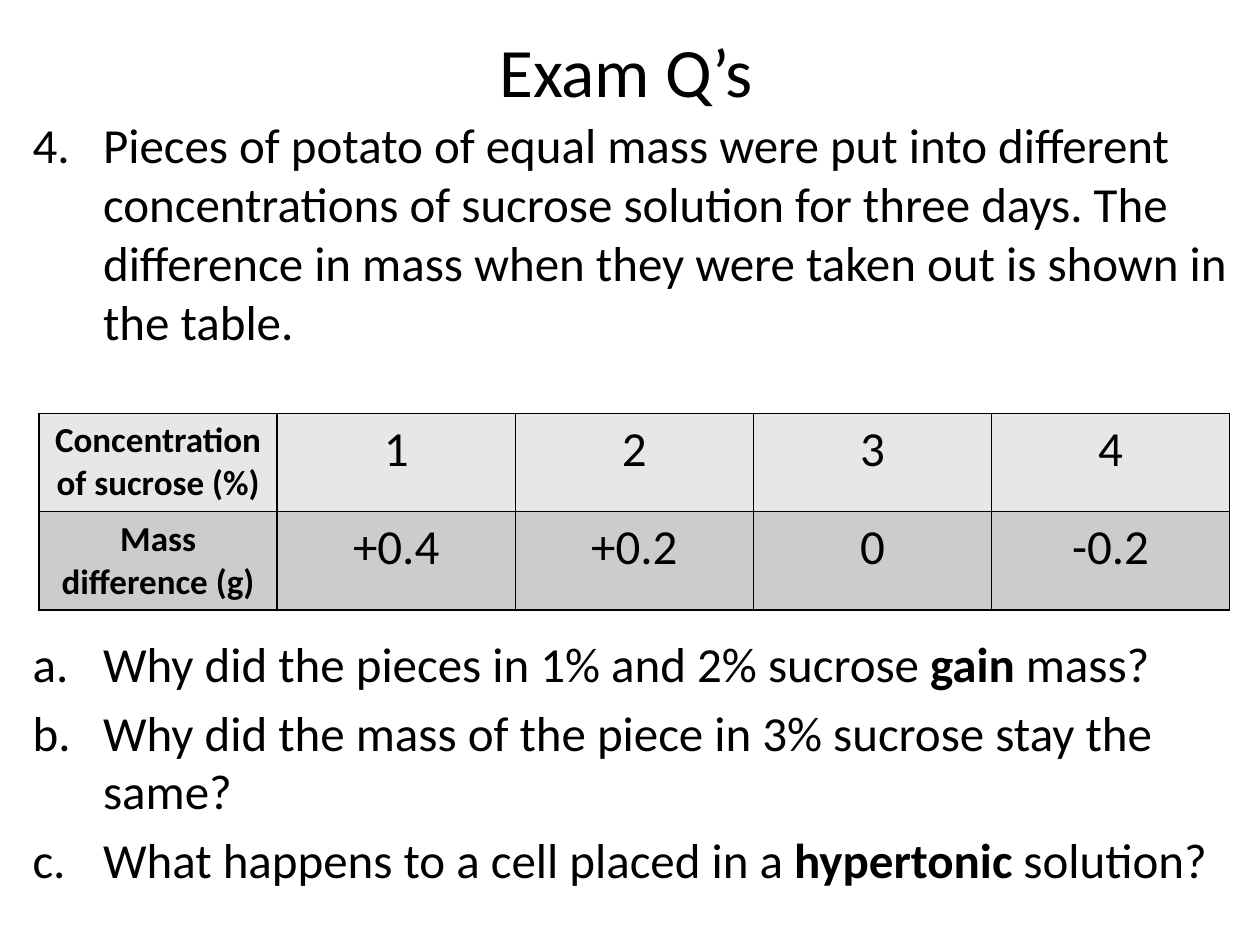
import pptx
import pptx.util
import pptx.dml.color
import pptx.enum.text
import pptx.oxml.ns
from lxml import etree

Inches, Pt = pptx.util.Inches, pptx.util.Pt
CENTER = pptx.enum.text.PP_ALIGN.CENTER
FONT = "Calibri"
COLORS = {"ink": "000000", "concentration": "E7E7E7", "mass": "CCCCCC"}

heading = "Exam Q’s"
INTRO_GAP, TABLE_GAP, ITEM_GAP = 5.6, 162, 5.6
questions = [
    ("arabicPeriod", 4, INTRO_GAP, [
        ("Pieces of potato of equal mass were put into different concentrations of "
         "sucrose solution for three days. The difference in mass when they were "
         "taken out is shown in the table.", False)]),
    ("alphaLcPeriod", 1, TABLE_GAP, [
        ("Why did the pieces in 1% and 2% sucrose ", False),
        ("gain ", True), ("mass?", False)]),
    ("alphaLcPeriod", 1, ITEM_GAP, [
        ("Why did the mass of the piece in 3% sucrose stay the same?", False)]),
    ("alphaLcPeriod", 1, ITEM_GAP, [
        ("What happens to a cell placed in a ", False),
        ("hypertonic", True), (" solution?", False)]),
]
results = [
    ("concentration", ["Concentration of sucrose (%)", "1", "2", "3", "4"]),
    ("mass", ["Mass difference (g)", "+0.4", "+0.2", "0", "-0.2"]),
]
COLUMN_WIDTH, ROW_HEIGHT = 1.89, 0.78


def rgb(name):
    return pptx.dml.color.RGBColor.from_string(COLORS[name])


def add_run(paragraph, text, size, bold=False):
    run = paragraph.add_run()
    run.text = text
    run.font.name, run.font.size, run.font.bold = FONT, Pt(size), bold
    run.font.color.rgb = rgb("ink")


def add_node(parent, tag, **attributes):
    return etree.SubElement(parent, pptx.oxml.ns.qn(tag), attributes)


def add_text_frame(slide, left, top, width, height):
    box = slide.shapes.add_textbox(Inches(left), Inches(top), Inches(width), Inches(height))
    box.text_frame.word_wrap = True
    return box.text_frame


def number_paragraph(paragraph, scheme, start):
    properties = paragraph._p.get_or_add_pPr()
    indent = Inches(0.56)
    properties.set("marL", str(indent))
    properties.set("indent", str(-indent))
    add_node(properties, "a:buFont", typeface=FONT)
    add_node(properties, "a:buAutoNum", type=scheme, startAt=str(start))


def add_borders(cell):
    properties = cell._tc.get_or_add_tcPr()
    for side in ("L", "R", "T", "B"):
        line = add_node(properties, f"a:ln{side}", w=str(Pt(1)))
        add_node(add_node(line, "a:solidFill"), "a:srgbClr", val=COLORS["ink"])


def add_heading(slide):
    frame = add_text_frame(slide, 0.47, 0.16, 9, 0.79)
    frame.vertical_anchor = pptx.enum.text.MSO_ANCHOR.MIDDLE
    paragraph = frame.paragraphs[0]
    paragraph.alignment = CENTER
    add_run(paragraph, heading, 39.6)


def add_questions(slide):
    frame = add_text_frame(slide, 0.16, 0.86, 9.69, 6.41)
    for index, (scheme, start, gap, runs) in enumerate(questions):
        paragraph = frame.add_paragraph() if index else frame.paragraphs[0]
        paragraph.space_before = Pt(gap)
        number_paragraph(paragraph, scheme, start)
        for text, bold in runs:
            add_run(paragraph, text, 28, bold)


def add_results(slide):
    row_count, column_count = len(results), len(results[0][1])
    table = slide.shapes.add_table(
        row_count, column_count, Inches(0.31), Inches(3.28),
        Inches(COLUMN_WIDTH * column_count), Inches(ROW_HEIGHT * row_count)).table
    table.first_row = table.horz_banding = False
    for column in table.columns:
        column.width = Inches(COLUMN_WIDTH)
    for row, (color, values) in enumerate(results):
        table.rows[row].height = Inches(ROW_HEIGHT)
        for column, value in enumerate(values):
            cell = table.cell(row, column)
            add_borders(cell)
            cell.fill.solid()
            cell.fill.fore_color.rgb = rgb(color)
            paragraph = cell.text_frame.paragraphs[0]
            paragraph.alignment = CENTER
            is_label = column == 0
            add_run(paragraph, value, 20 if is_label else 28, is_label)


def main():
    presentation = pptx.Presentation()
    presentation.slide_width, presentation.slide_height = Inches(10), Inches(7.5)
    slide = presentation.slides.add_slide(presentation.slide_layouts[6])
    add_heading(slide)
    add_questions(slide)
    add_results(slide)
    presentation.save("out.pptx")


if __name__ == "__main__":
    main()
